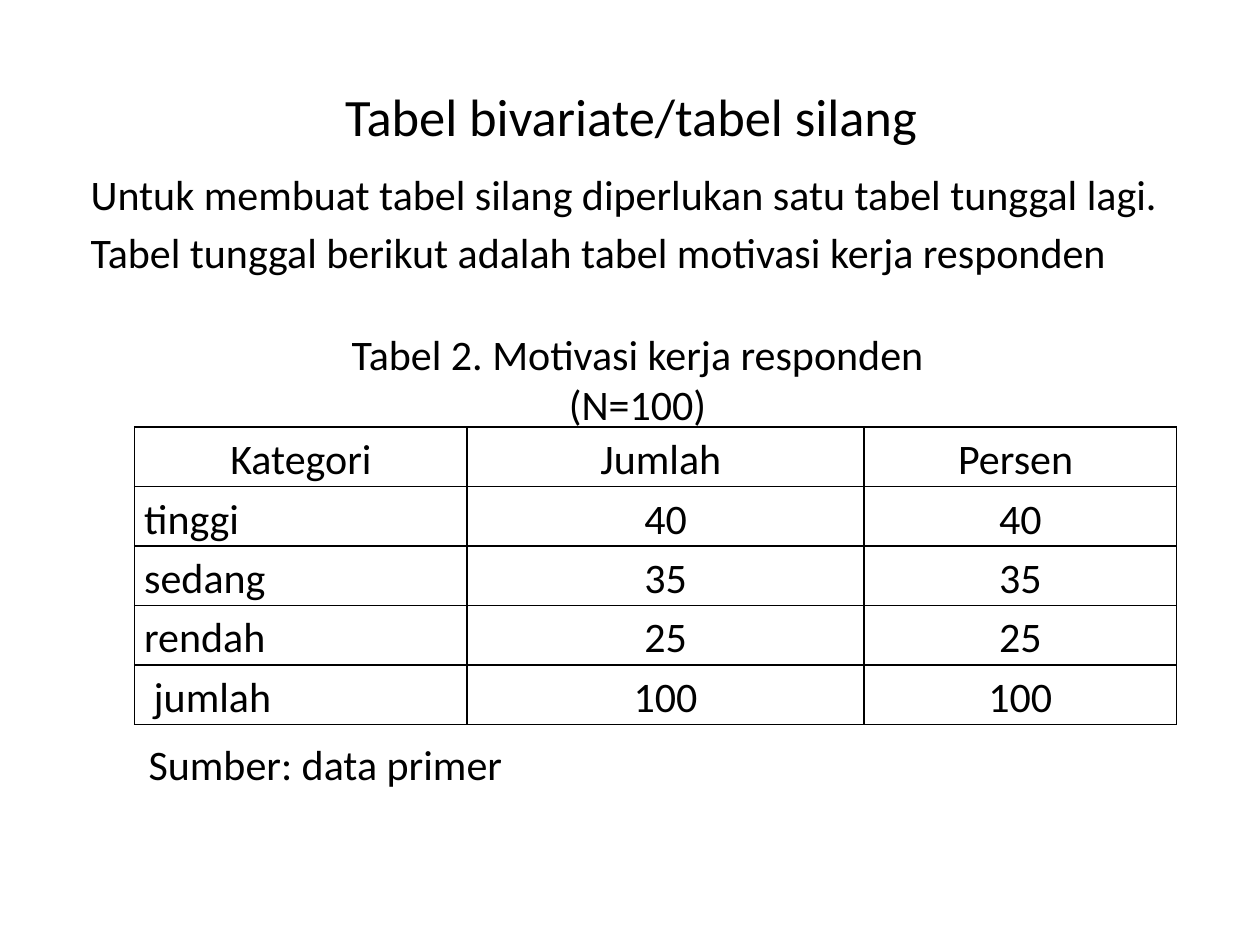
"""Build a slide showing a frequency table of work motivation."""
import pptx
import pptx.dml.color
import pptx.enum.text
import pptx.oxml
import pptx.oxml.ns
import pptx.util

Pt = pptx.util.Pt
LEFT = pptx.enum.text.PP_ALIGN.LEFT
CENTER = pptx.enum.text.PP_ALIGN.CENTER
TOP = pptx.enum.text.MSO_ANCHOR.TOP
MIDDLE = pptx.enum.text.MSO_ANCHOR.MIDDLE

THEME = {"font": "Calibri", "ink": "000000", "title": 30, "text": 24, "border": 1}
LOOSE = 1.15

TITLE = "Tabel bivariate/tabel silang"
INTRO = ("Untuk membuat tabel silang diperlukan satu tabel tunggal lagi. "
         "Tabel tunggal berikut adalah tabel motivasi kerja responden")
CAPTION = ["Tabel 2. Motivasi kerja responden", "(N=100)"]
ROWS = [
    ("Kategori", "Jumlah ", "Persen "),
    ("tinggi", "40", "40"),
    ("sedang", "35", "35"),
    ("rendah", "25", "25"),
    (" jumlah", "100", "100"),
]
SOURCE = "Sumber: data primer"

COLUMNS = [190, 226.8, 178.6]
ROW_HEIGHT = 34
TABLE_LEFT, TABLE_TOP = 77, 244
CAPTION_GAP = 29.3


def write(p, text, size=THEME["text"], align=LEFT, spacing=1.0, before=0, after=0):
    p.alignment = align
    p.line_spacing = spacing
    p.space_before, p.space_after = Pt(before), Pt(after)
    r = p.add_run()
    r.text = text
    r.font.name, r.font.size = THEME["font"], Pt(size)
    r.font.color.rgb = pptx.dml.color.RGBColor.from_string(THEME["ink"])


def add_box(s, left, top, width, height, anchor=TOP, wrap=True):
    tf = s.shapes.add_textbox(Pt(left), Pt(top), Pt(width), Pt(height)).text_frame
    tf.word_wrap = wrap
    tf.vertical_anchor = anchor
    return tf


def add_borders(cell):
    tcPr = cell._tc.get_or_add_tcPr()
    for i, side in enumerate(("lnL", "lnR", "lnT", "lnB")):
        tcPr.insert(i, pptx.oxml.parse_xml(
            f'<a:{side} {pptx.oxml.ns.nsdecls("a")} w="{Pt(THEME["border"])}">'
            f'<a:solidFill><a:srgbClr val="{THEME["ink"]}"/></a:solidFill></a:{side}>'))


def add_table(s):
    table = s.shapes.add_table(len(ROWS), len(COLUMNS), Pt(TABLE_LEFT), Pt(TABLE_TOP),
                               Pt(sum(COLUMNS)), Pt(ROW_HEIGHT * len(ROWS))).table
    table.first_row = table.horz_banding = False
    for column, width in zip(table.columns, COLUMNS):
        column.width = Pt(width)
    for i, values in enumerate(ROWS):
        table.rows[i].height = Pt(ROW_HEIGHT)
        for j, value in enumerate(values):
            cell = table.cell(i, j)
            cell.margin_left = cell.margin_right = Pt(5.4)
            cell.margin_top = cell.margin_bottom = 0
            add_borders(cell)
            cell.fill.background()
            align = LEFT if i and not j else CENTER
            write(cell.text_frame.paragraphs[0], value, align=align, spacing=LOOSE)


def main():
    prs = pptx.Presentation()
    prs.slide_width, prs.slide_height = Pt(720), Pt(540)
    s = prs.slides.add_slide(prs.slide_layouts[6])

    tf = add_box(s, 36.7, 37.4, 648, 57, MIDDLE)
    write(tf.paragraphs[0], TITLE, THEME["title"], CENTER)

    tf = add_box(s, 36, 88.6, 648, 394)
    tf.margin_left = Pt(15.8)
    write(tf.paragraphs[0], INTRO, spacing=LOOSE)
    for i, line in enumerate(CAPTION):
        write(tf.add_paragraph(), line, align=CENTER, before=0 if i else CAPTION_GAP)

    add_table(s)

    tf = add_box(s, 77.8, TABLE_TOP + ROW_HEIGHT * len(ROWS), 218, 39, wrap=False)
    write(tf.paragraphs[0], SOURCE, spacing=LOOSE, after=10)
    prs.save("out.pptx")


if __name__ == "__main__":
    main()
